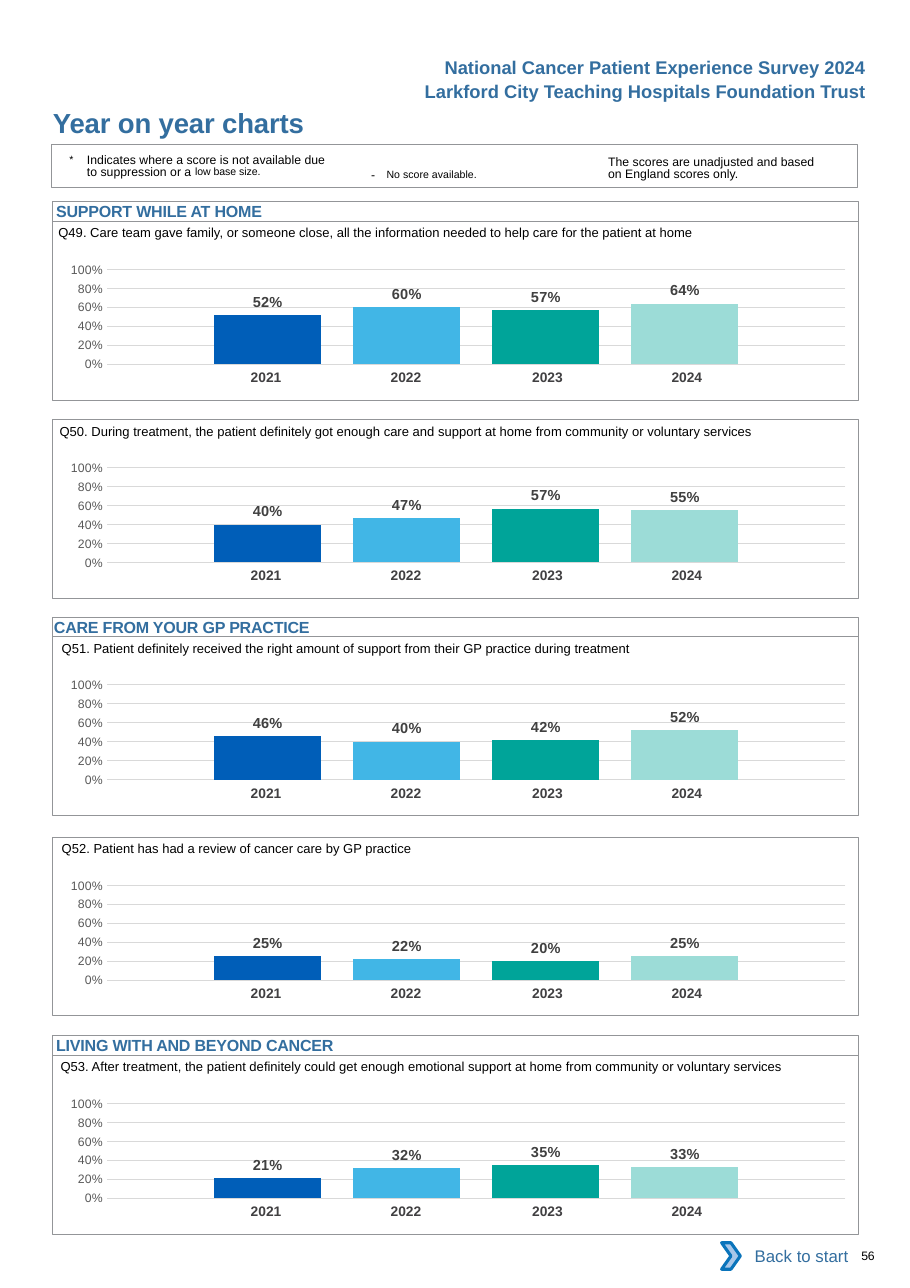
from dataclasses import dataclass

from lxml.etree import SubElement
from pptx import Presentation
from pptx.chart.data import CategoryChartData
from pptx.dml.color import RGBColor
from pptx.enum.chart import XL_CHART_TYPE as ChartType
from pptx.enum.chart import XL_LABEL_POSITION as LabelPosition
from pptx.enum.chart import XL_TICK_MARK as TickMark
from pptx.enum.shapes import MSO_SHAPE as Preset
from pptx.enum.text import MSO_ANCHOR as Anchor
from pptx.enum.text import MSO_AUTO_SIZE as AutoSize
from pptx.enum.text import PP_ALIGN as Align
from pptx.oxml import parse_xml
from pptx.oxml.ns import nsdecls, qn
from pptx.util import Inches, Pt


@dataclass(frozen=True)
class Theme:
    font: str = "Arial"
    chart_font: str = "Calibri"
    blue: str = "336E9F"
    black: str = "000000"
    white: str = "FFFFFF"
    frame: str = "939598"
    grid: str = "D9D9D9"
    axis: str = "595959"
    label: str = "404040"
    year: str = "414042"
    chevron: str = "A8C7E9"
    chevron_edge: str = "0A74BB"
    bars: tuple = ("005EB8", "41B6E6", "00A499", "9CDCD7")
    title_size: float = 18
    header_size: float = 12
    section_size: float = 10.5
    question_size: float = 8.5
    note_size: float = 8
    raised_size: float = 12
    link_size: float = 11
    year_size: float = 9
    axis_size: float = 8
    label_size: float = 9.5
    chart_size: float = 10


THEME = Theme()
PLAIN_TABLE = "{2D5ABB26-0587-4C30-8999-92F81FD0307C}"
YEARS = ("2021", "2022", "2023", "2024")
YEAR_WIDTHS = (1.27, 1.27, 1.34, 1.27)
YEAR_RIGHT_INSETS = (0, 0, 0.04, 0.12)
PANEL_LEFT, PANEL_WIDTH, PANEL_HEIGHT = 0.48, 7.31, 1.62

# Frame top, section heading, heading indent, question left, question, scores
PANELS = (
    (2.01, "SUPPORT WHILE AT HOME", 0.03, 0.53,
     "Q49. Care team gave family, or someone close, all the information needed "
     "to help care for the patient at home", (0.52, 0.6, 0.57, 0.64)),
    (3.81, None, 0, 0.54,
     "Q50. During treatment, the patient definitely got enough care and support "
     "at home from community or voluntary services", (0.4, 0.47, 0.57, 0.55)),
    (5.78, "CARE FROM YOUR GP PRACTICE", 0.01, 0.56,
     "Q51. Patient definitely received the right amount of support from their "
     "GP practice during treatment", (0.46, 0.4, 0.42, 0.52)),
    (7.6, None, 0, 0.56,
     "Q52. Patient has had a review of cancer care by GP practice",
     (0.25, 0.22, 0.2, 0.25)),
    (9.58, "LIVING WITH AND BEYOND CANCER", 0.03, 0.55,
     "Q53. After treatment, the patient definitely could get enough emotional "
     "support at home from community or voluntary services",
     (0.21, 0.32, 0.35, 0.33)),
)


def rgb(code):
    return RGBColor.from_string(code)


def style_font(font, size, color, bold=False, name=THEME.font):
    font.name, font.size, font.bold = name, Pt(size), bold
    font.color.rgb = rgb(color)


def add_run(paragraph, text, size, color=THEME.black, bold=False, spacing=0, raised=0):
    run = paragraph.add_run()
    run.text = text
    style_font(run.font, size, color, bold)
    properties = run._r.get_or_add_rPr()
    if spacing:
        properties.set("spc", str(round(spacing * 100)))
    if raised:
        properties.set("baseline", str(raised * 1000))


def prepare(frame, insets=(0, 0, 0, 0), anchor=Anchor.TOP, align=Align.LEFT):
    """Set up a text frame and return its first paragraph."""
    frame.word_wrap, frame.auto_size = True, AutoSize.NONE
    frame.vertical_anchor = anchor
    (frame.margin_left, frame.margin_top,
     frame.margin_right, frame.margin_bottom) = map(Inches, insets)
    paragraph = frame.paragraphs[0]
    paragraph.alignment = align
    return paragraph


def add_text(slide, box, **layout):
    return prepare(slide.shapes.add_textbox(*map(Inches, box)).text_frame, **layout)


def add_preset(slide, preset, box, fill=None, line=None, width=0.5):
    shape = slide.shapes.add_shape(preset, *map(Inches, box))
    shape.shadow.inherit = False
    for part, color in ((shape.fill, fill), (shape.line.fill, line)):
        if color:
            part.solid()
            part.fore_color.rgb = rgb(color)
        else:
            part.background()
    if line:
        shape.line.width = Pt(width)
    return shape


def add_year_row(slide, top):
    box = (1.73, top, sum(YEAR_WIDTHS), 0.27)
    table = slide.shapes.add_table(1, len(YEARS), *map(Inches, box)).table
    table.first_row = table.horz_banding = False
    table._tbl.tblPr.find(qn("a:tableStyleId")).text = PLAIN_TABLE
    for index, (year, width, right) in enumerate(zip(YEARS, YEAR_WIDTHS, YEAR_RIGHT_INSETS)):
        table.columns[index].width = Inches(width)
        cell = table.cell(0, index)
        cell.fill.background()
        cell.margin_left, cell.margin_right = Inches(0.1), Inches(right)
        cell.margin_top = cell.margin_bottom = Inches(0.05)
        paragraph = cell.text_frame.paragraphs[0]
        paragraph.alignment = Align.CENTER
        add_run(paragraph, year, THEME.year_size, THEME.year, bold=True)


def add_score_chart(slide, top, scores):
    data = CategoryChartData(number_format="0%")
    data.categories = ["1"]
    for year, score in zip(YEARS, scores):
        data.add_series(year, [score])
    box = map(Inches, (0.39, top, 7.32, 1.29))
    chart = slide.shapes.add_chart(ChartType.COLUMN_CLUSTERED, *box, data).chart
    chart.has_legend = chart.has_title = False
    style_font(chart.font, THEME.chart_size, THEME.black, name=THEME.chart_font)

    # Axes
    chart.category_axis.visible = False
    axis = chart.value_axis
    axis.minimum_scale, axis.maximum_scale, axis.major_unit = 0, 1, 0.2
    axis.major_tick_mark = axis.minor_tick_mark = TickMark.NONE
    axis.format.line.fill.background()
    axis.major_gridlines.format.line.color.rgb = rgb(THEME.grid)
    axis.major_gridlines.format.line.width = Pt(0.75)
    axis.tick_labels.number_format = "0%"
    axis.tick_labels.number_format_is_linked = False
    style_font(axis.tick_labels.font, THEME.axis_size, THEME.axis)

    # Bars and their labels
    plot = chart.plots[0]
    plot.gap_width, plot.overlap, plot.vary_by_categories = 200, -30, False
    for series, color in zip(plot.series, THEME.bars):
        series.format.fill.solid()
        series.format.fill.fore_color.rgb = rgb(color)
        labels = series.data_labels
        labels.show_value, labels.position = True, LabelPosition.OUTSIDE_END
        labels.number_format, labels.number_format_is_linked = "0%", False
        style_font(labels.font, THEME.label_size, THEME.label, bold=True)

    # Fixed inner plot area
    area = chart._chartSpace.chart.plotArea
    for layout in area.findall(qn("c:layout")):
        area.remove(layout)
    layout = parse_xml(f"<c:layout {nsdecls('c')}><c:manualLayout/></c:layout>")
    area.insert(0, layout)
    for tag, value in (("layoutTarget", "inner"), ("xMode", "edge"), ("yMode", "edge"),
                       ("x", "0.08"), ("y", "0.145"), ("w", "0.915"), ("h", "0.666")):
        SubElement(layout[0], qn(f"c:{tag}")).set("val", value)


def add_panel(slide, top, section, indent, question_left, question, scores):
    if section:
        box = (PANEL_LEFT, top - 0.18, PANEL_WIDTH, 0.18)
        heading = add_preset(slide, Preset.RECTANGLE, box, line=THEME.frame)
        paragraph = prepare(heading.text_frame, insets=(indent, 0, 0, 0))
        add_run(paragraph, section, THEME.section_size, THEME.blue, True, spacing=-0.1)
    paragraph = add_text(slide, (question_left, top - 0.06, 7.21, 0.24), insets=(0, 0.09, 0, 0))
    add_run(paragraph, question, THEME.question_size)
    add_year_row(slide, top + 1.3)
    add_score_chart(slide, top + 0.25, scores)
    add_preset(slide, Preset.RECTANGLE, (PANEL_LEFT, top, PANEL_WIDTH, PANEL_HEIGHT), line=THEME.frame)


def add_headers(slide):
    for top, text in ((0.46, "National Cancer Patient Experience Survey 2024"),
                      (0.68, "Larkford City Teaching Hospitals Foundation Trust")):
        paragraph = add_text(slide, (3.4, top, 4.56, 0.3), insets=(0.1, 0.05, 0.1, 0.05), align=Align.RIGHT)
        add_run(paragraph, text, THEME.header_size, THEME.blue, bold=True)
    title = slide.shapes.title
    title.left, title.top, title.width, title.height = map(Inches, (0.47, 0.96, 4.5, 0.3))
    paragraph = prepare(title.text_frame, insets=(0.01, 0, 0, 0))
    add_run(paragraph, "Year on year charts", THEME.title_size, THEME.blue, True, spacing=-0.1)


def add_notes_box(slide):
    suppressed = add_text(slide, (0.63, 1.38, 2.4, 0.27), insets=(0, 0.03, 0, 0))
    suppressed._p.get_or_add_pPr().set("marL", str(Inches(0.16)))
    suppressed._p.get_or_add_pPr().set("indent", str(-Inches(0.16)))
    suppressed.line_spacing = Pt(8.1)
    add_run(suppressed, "*\t", THEME.raised_size, raised=3)
    add_run(suppressed, "Indicates where a score is not available due to suppression or a ", THEME.note_size)
    add_run(suppressed, "low base size.", THEME.raised_size, spacing=-0.05, raised=7)

    missing = add_text(slide, (3.27, 1.41, 1.83, 0.24), insets=(0.1, 0.05, 0.1, 0.05))
    add_run(missing, "- ", THEME.note_size, spacing=2.6)
    add_run(missing, "No score available.", THEME.raised_size, raised=3)

    unadjusted = add_text(slide, (5.52, 1.39, 1.98, 0.27), insets=(0, 0.03, 0, 0))
    unadjusted.line_spacing = Pt(8.1)
    add_run(unadjusted, "The scores are unadjusted and based on England scores only.", THEME.note_size)
    add_preset(slide, Preset.RECTANGLE, (0.47, 1.31, PANEL_WIDTH, 0.39), line=THEME.frame, width=0.75)


def add_footer(slide):
    link = add_preset(slide, Preset.RECTANGLE, (6.62, 11.19, 1.18, 0.42), fill=THEME.white)
    paragraph = prepare(link.text_frame, (0.1, 0.05, 0.1, 0.05), Anchor.MIDDLE, Align.RIGHT)
    add_run(paragraph, "Back to start", THEME.link_size, THEME.blue)
    add_preset(slide, Preset.CHEVRON, (6.55, 11.28, 0.17, 0.24), THEME.chevron, THEME.chevron_edge, 2)
    page = add_text(slide, (7.72, 11.33, 0.51, 0.13), insets=(0.1, 0, 0, 0))
    add_run(page, "56", THEME.note_size, spacing=-0.2)


def main():
    deck = Presentation()
    deck.slide_width, deck.slide_height = Inches(8.26), Inches(11.69)
    slide = deck.slides.add_slide(deck.slide_layouts[5])
    add_headers(slide)
    add_notes_box(slide)
    add_footer(slide)
    for panel in PANELS:
        add_panel(slide, *panel)
    deck.save("out.pptx")


if __name__ == "__main__":
    main()
